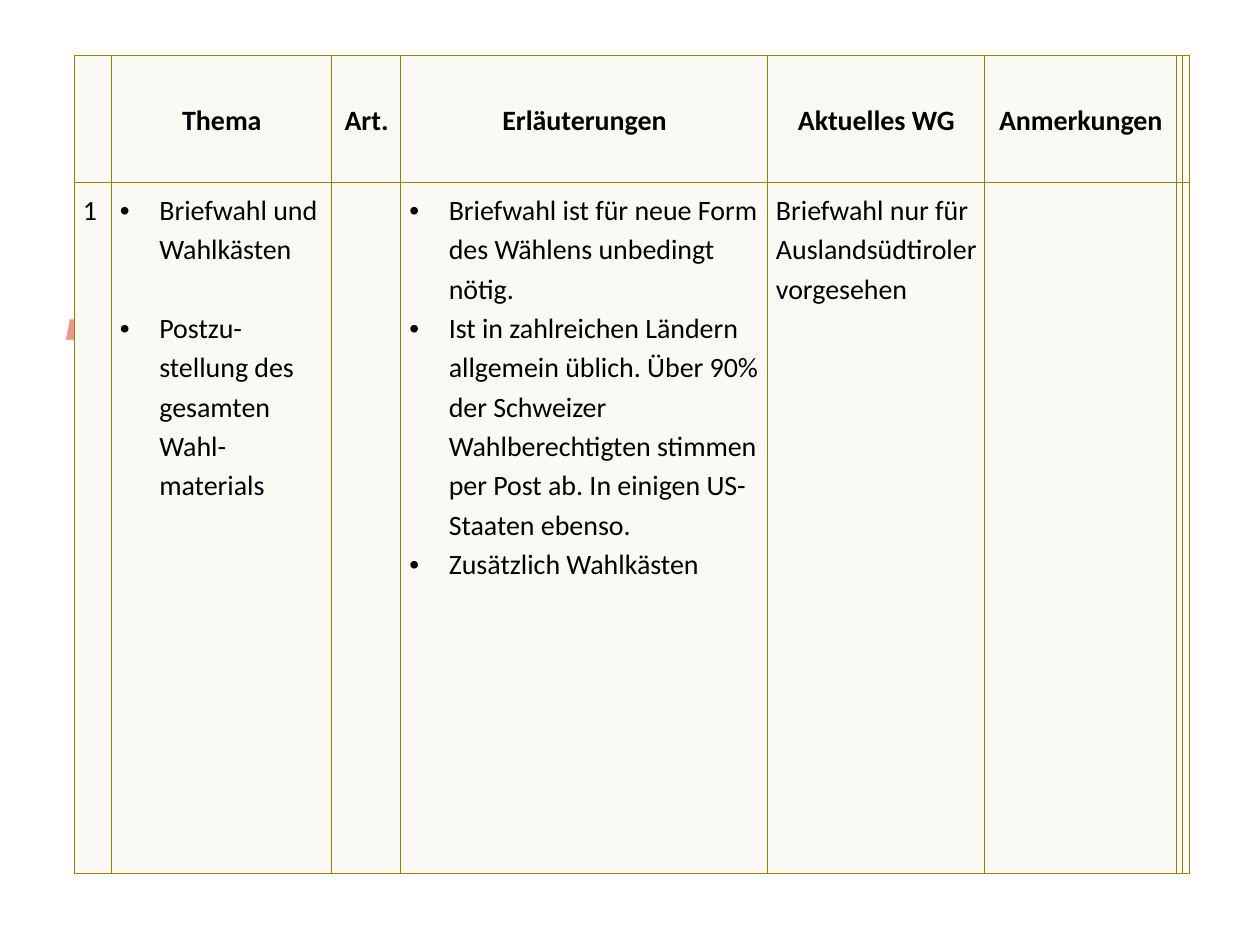
from dataclasses import dataclass
from typing import Any

from lxml.etree import SubElement
from pptx import Presentation
from pptx.dml.color import RGBColor
from pptx.enum.text import MSO_ANCHOR as Anchor, PP_ALIGN as Align
from pptx.oxml.ns import qn
from pptx.util import Pt

COLORS = {"text": "000000", "accent": "EE9789", "cell": "FAF9F4", "border": "948200"}
WIDTHS = [21.2, 125.7, 39.7, 209.5, 124, 109.7, 3.8, 3.6]
HEIGHTS = [72.6, 394.9]
HEADERS = ["", "Thema", "Art.", "Erläuterungen", "Aktuelles WG", "Anmerkungen"]
TOPICS = ["Briefwahl und Wahlkästen", "Postzu-stellung des gesamten Wahl-materials"]
NOTES = [
    "Briefwahl ist für neue Form des Wählens unbedingt nötig.",
    "Ist in zahlreichen Ländern allgemein üblich. Über 90% der Schweizer "
    "Wahlberechtigten stimmen per Post ab. In einigen US-Staaten ebenso.",
    "Zusätzlich Wahlkästen",
]


def rgb(name):
    return RGBColor.from_string(COLORS[name])


@dataclass
class Deck:
    slide: Any
    font: str = "Calibri"
    size: float = 16
    line_spacing: float = 1.15
    indent: float = 22.5

    def title(self, text, x, y, w, h, bottom):
        sp = self.slide.shapes.add_textbox(Pt(x), Pt(y), Pt(w), Pt(h))
        tf = sp.text_frame
        tf.word_wrap = True
        tf.vertical_anchor = Anchor.BOTTOM
        tf.margin_left = tf.margin_right = Pt(3.6)
        tf.margin_top, tf.margin_bottom = 0, Pt(bottom)
        tf.text = text
        self.style(tf.paragraphs[0].font, "Open Sans", 48, "accent", True)

    def table(self, x, y, widths, heights):
        frame = self.slide.shapes.add_table(
            len(heights), len(widths), Pt(x), Pt(y), Pt(sum(widths)), Pt(sum(heights)))
        table = frame.table
        table.first_row = table.horz_banding = False
        for col, w in zip(table.columns, widths):
            col.width = Pt(w)
        for row, h in zip(table.rows, heights):
            row.height = Pt(h)
        for cell in table.iter_cells():
            self.cell_style(cell)
        return table

    def cell_style(self, cell):
        cell.margin_left = cell.margin_right = 0
        pr = cell._tc.get_or_add_tcPr()
        for side in ("lnL", "lnR", "lnT", "lnB"):
            ln = SubElement(pr, qn(f"a:{side}"), w=str(Pt(0.75)))
            fill = SubElement(ln, qn("a:solidFill"))
            SubElement(fill, qn("a:srgbClr"), val=COLORS["border"])
        cell.fill.solid()
        cell.fill.fore_color.rgb = rgb("cell")

    def cell_text(self, cell, lines, bold=False, bullets=False, gap=0):
        cell.margin_left, cell.margin_right = Pt(5), Pt(4.3)
        cell.vertical_anchor = Anchor.MIDDLE if bold else Anchor.TOP
        tf = cell.text_frame
        tf.text = "\n".join(lines)
        for i, p in enumerate(tf.paragraphs):
            p.alignment = Align.CENTER if bold else Align.LEFT
            p.line_spacing = self.line_spacing
            if i and gap:
                p.space_before = Pt(gap)
            if bullets:
                self.bullet(p)
            for r in p.runs:
                self.style(r.font, self.font, self.size, "text", bold)

    def bullet(self, p):
        pr = p._p.get_or_add_pPr()
        pr.set("marL", str(Pt(self.indent)))
        pr.set("indent", str(-Pt(self.indent)))
        SubElement(pr, qn("a:buFont"), typeface="Arial")
        SubElement(pr, qn("a:buChar"), char="•")

    def style(self, font, name, size, color, bold):
        font.name, font.size, font.bold = name, Pt(size), bold
        font.color.rgb = rgb(color)


def main():
    prs = Presentation()
    prs.slide_width, prs.slide_height = Pt(720), Pt(540)
    deck = Deck(prs.slides.add_slide(prs.slide_layouts[6]))

    # Title, mostly covered by the table
    deck.title(",", 33, 108, 648, 144, bottom=54)

    # Table with header row
    table = deck.table(42.4, 31.6, WIDTHS, HEIGHTS)
    for col, text in enumerate(HEADERS):
        if text:
            deck.cell_text(table.cell(0, col), [text], bold=True)

    # Topic row
    deck.cell_text(table.cell(1, 0), ["1"])
    deck.cell_text(table.cell(1, 1), TOPICS, bullets=True, gap=22.5)
    deck.cell_text(table.cell(1, 3), NOTES, bullets=True)
    deck.cell_text(table.cell(1, 4), ["Briefwahl nur für Auslandsüdtiroler vorgesehen"])

    prs.save("out.pptx")


if __name__ == "__main__":
    main()
